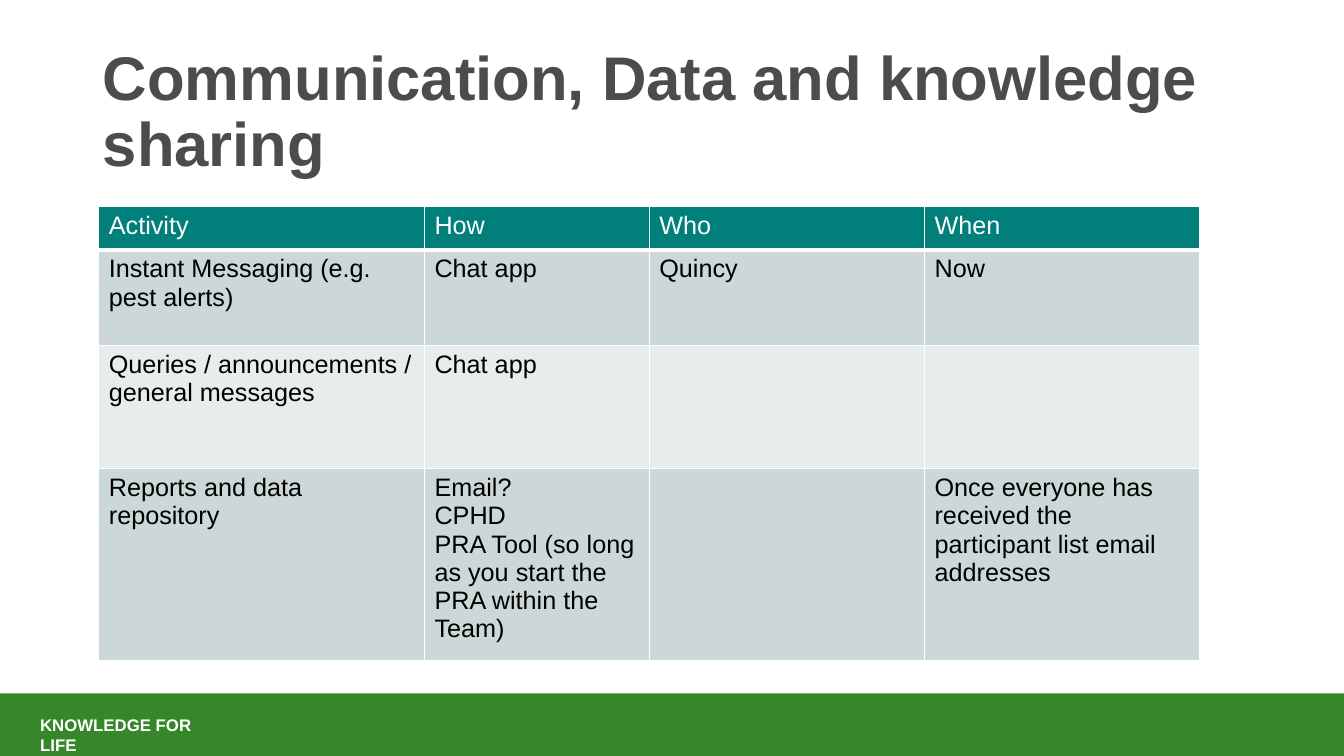
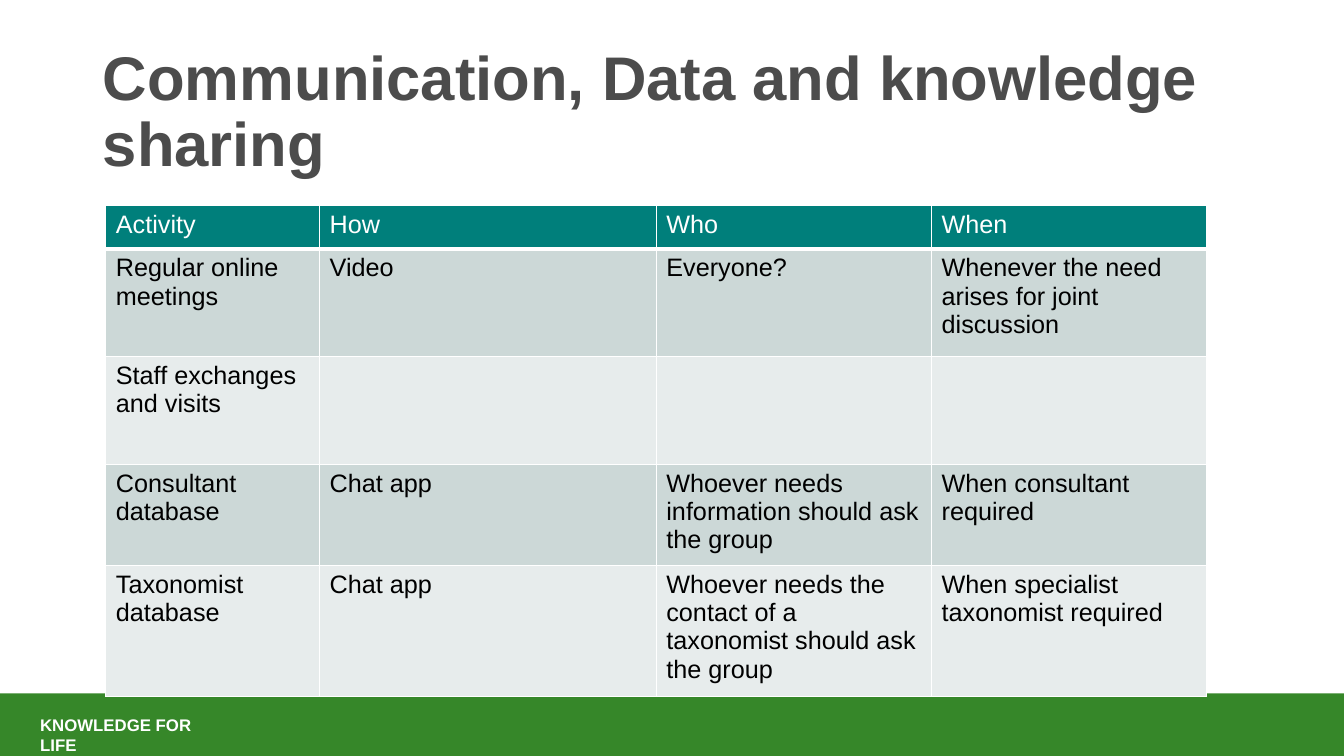
from dataclasses import dataclass

from lxml import etree
from pptx import Presentation
from pptx.dml.color import RGBColor
from pptx.enum import shapes, text
from pptx.oxml import ns
from pptx.util import Inches, Pt


@dataclass(frozen=True)
class Theme:
    font: str = "Arial"
    white: str = "FFFFFF"
    black: str = "000000"
    title_grey: str = "4C4C4C"
    band_green: str = "368729"
    header_teal: str = "007F7B"
    row_fills: tuple = ("CCD8D7", "E7ECEC")
    title_size: int = 44
    table_size: int = 18
    footer_size: int = 12


WIDTH, HEIGHT = 13.33, 7.5
TITLE = "Communication, Data and knowledge sharing"
HEADINGS = ["Activity", "How", "Who", "When"]

MESSAGES = [
    ["Instant Messaging (e.g. pest alerts)", "Chat app", "Quincy", "Now"],
    ["Queries / announcements / general messages", "Chat app", "", ""],
    ["Reports and data repository",
     "Email?\nCPHD\nPRA Tool (so long as you start the PRA within the Team)",
     "", "Once everyone has received the participant list email addresses"],
]
MEETINGS = [
    ["Regular online meetings", "Video", "Everyone?",
     "Whenever the need arises for joint discussion"],
    ["Staff exchanges and visits", "", "", ""],
    ["Consultant database", "Chat app",
     "Whoever needs information should ask the group",
     "When consultant required"],
    ["Taxonomist database", "Chat app",
     "Whoever needs the contact of a taxonomist should ask the group",
     "When specialist taxonomist required"],
]


class SlideBuilder:
    def __init__(self, theme):
        self.theme = theme
        self.deck = Presentation()
        self.deck.slide_width = Inches(WIDTH)
        self.deck.slide_height = Inches(HEIGHT)
        self.page = None

    def new_page(self, title):
        self.page = self.deck.slides.add_slide(self.deck.slide_layouts[5])
        self.title(title)
        self.footer("KNOWLEDGE FOR LIFE")

    def style(self, frame, size, color, bold=False):
        for para in frame.paragraphs:
            para.alignment = text.PP_ALIGN.LEFT
            # Paragraph font covers empty cells, run font the visible words
            for font in [para.font] + [span.font for span in para.runs]:
                font.name = self.theme.font
                font.size = Pt(size)
                font.bold = bold
                font.color.rgb = RGBColor.from_string(color)

    def title(self, words):
        box = self.page.shapes.title
        box.left, box.top = Inches(0.92), Inches(0.4)
        box.width, box.height = Inches(11.5), Inches(1.45)
        frame = box.text_frame
        frame.text = words
        frame.word_wrap = True
        frame.auto_size = text.MSO_AUTO_SIZE.NONE
        frame.vertical_anchor = text.MSO_ANCHOR.MIDDLE
        frame.paragraphs[0].line_spacing = 0.9
        self.style(frame, self.theme.title_size, self.theme.title_grey, True)

    def footer(self, words):
        top = 6.88
        band = self.page.shapes.add_shape(
            shapes.MSO_SHAPE.RECTANGLE, 0, Inches(top),
            Inches(WIDTH), Inches(HEIGHT - top))
        band.shadow.inherit = False
        band.fill.solid()
        band.fill.fore_color.rgb = RGBColor.from_string(self.theme.band_green)
        band.line.fill.background()

        box = self.page.shapes.add_textbox(
            Inches(0.3), Inches(7.04), Inches(1.76), Inches(0.3))
        frame = box.text_frame
        frame.word_wrap = True
        frame.text = words
        self.style(frame, self.theme.footer_size, self.theme.white, True)

    def borders(self, cell, bottom):
        properties = cell._tc.get_or_add_tcPr()
        for side in ("L", "R", "T", "B"):
            width = bottom if side == "B" else 1
            line = etree.SubElement(properties, ns.qn(f"a:ln{side}"), w=str(Pt(width)))
            fill = etree.SubElement(line, ns.qn("a:solidFill"))
            etree.SubElement(fill, ns.qn("a:srgbClr"), val=self.theme.white)

    def table(self, left, top, widths, heights, rows):
        theme = self.theme
        content = [HEADINGS] + rows
        table = self.page.shapes.add_table(
            len(content), len(widths), Inches(left), Inches(top),
            Inches(sum(widths)), Inches(sum(heights))).table
        table.horz_banding = False
        for column, width in zip(table.columns, widths):
            column.width = Inches(width)
        for index, (row, height, words) in enumerate(zip(table.rows, heights, content)):
            row.height = Inches(height)
            header = index == 0
            fill = theme.header_teal if header else theme.row_fills[(index - 1) % 2]
            color = theme.white if header else theme.black
            for cell, value in zip(row.cells, words):
                cell.text_frame.text = value
                self.style(cell.text_frame, theme.table_size, color)
                self.borders(cell, 3 if header else 1)
                cell.fill.solid()
                cell.fill.fore_color.rgb = RGBColor.from_string(fill)


def main():
    builder = SlideBuilder(Theme())

    # Messaging and reports
    builder.new_page(TITLE)
    builder.table(0.98, 2.05, [3.23, 2.23, 2.73, 2.73],
                  [0.43, 0.95, 1.22, 1.78], MESSAGES)

    # Meetings, exchanges and databases
    builder.new_page(TITLE)
    builder.table(1.05, 2.04, [2.12, 3.34, 2.73, 2.73],
                  [0.43, 1.07, 1.07, 0.95, 1.22], MEETINGS)

    builder.deck.save("out.pptx")


if __name__ == "__main__":
    main()
